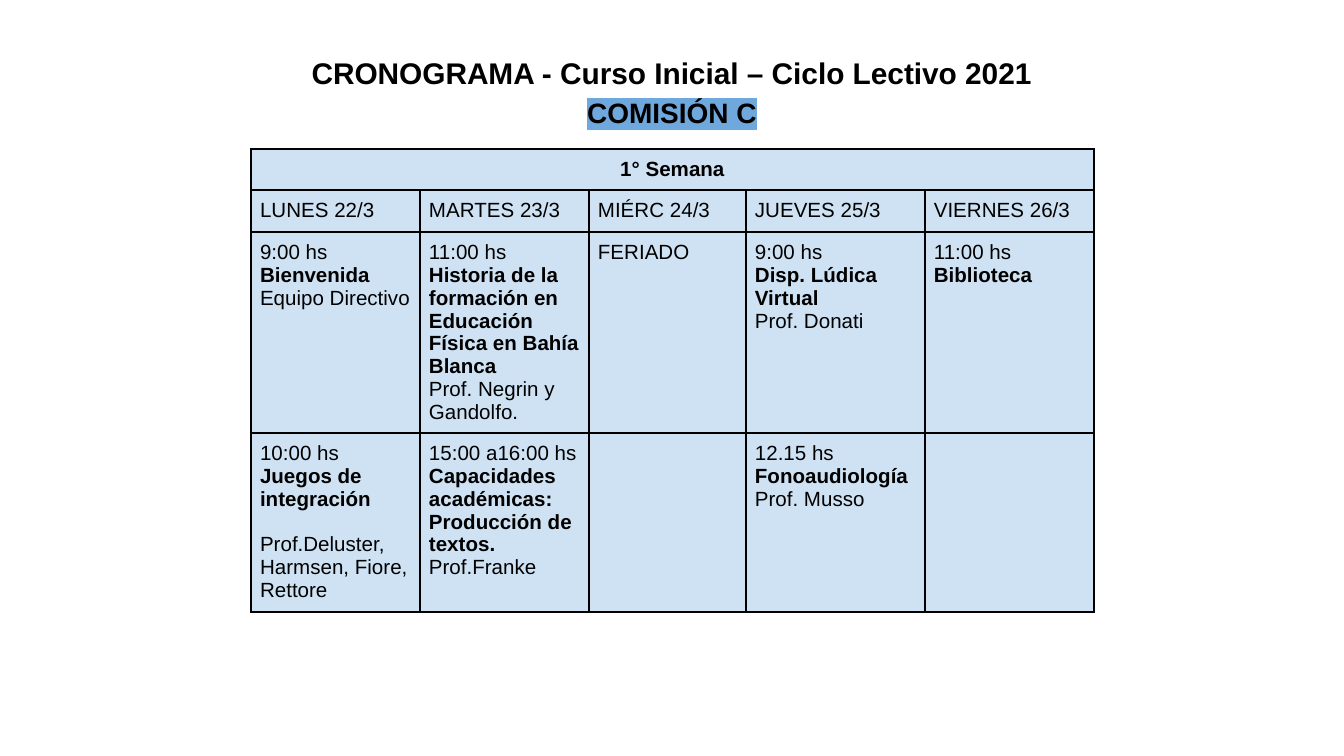
import pptx
import pptx.dml.color
import pptx.enum.text
import pptx.oxml
import pptx.oxml.ns
import pptx.util

EMU_PER_PX = 914400 / 134.4
FONT = "Arial"
BLACK = "000000"
CELL_FILL = "CFE2F3"
HIGHLIGHT = "6FA8DC"
CENTER = pptx.enum.text.PP_ALIGN.CENTER

COLUMN_WIDTHS = [169, 169, 157, 179, 169]
ROW_HEIGHTS = [41, 42, 201, 179]

WEEK = "1° Semana"
DAYS = ["LUNES 22/3", "MARTES 23/3", "MIÉRC 24/3", "JUEVES 25/3", "VIERNES 26/3"]

# Each activity: time, bold title lines, closing lines
ACTIVITIES = [
    [
        ("9:00 hs", ["Bienvenida"], ["Equipo Directivo"]),
        ("11:00 hs",
         ["Historia de la formación en Educación Física en Bahía Blanca"],
         ["Prof. Negrin y Gandolfo."]),
        ("FERIADO", [], []),
        ("9:00 hs", ["Disp. Lúdica", "Virtual"], ["Prof. Donati"]),
        ("11:00 hs", ["Biblioteca"], []),
    ],
    [
        ("10:00 hs", ["Juegos de integración"],
         ["Prof.Deluster, Harmsen, Fiore,", "Rettore"]),
        ("15:00 a16:00 hs",
         ["Capacidades académicas: Producción de textos."], ["Prof.Franke"]),
        None,
        ("12.15 hs", ["Fonoaudiología"], ["Prof. Musso"]),
        None,
    ],
]


def px(length):
    return pptx.util.Emu(round(length * EMU_PER_PX))


def color(value):
    return pptx.dml.color.RGBColor.from_string(value)


def solid_fill_xml(tag, value, attributes=""):
    namespace = pptx.oxml.ns.nsdecls("a")
    return pptx.oxml.parse_xml(
        f'<a:{tag} {namespace} {attributes}><a:solidFill>'
        f'<a:srgbClr val="{value}"/></a:solidFill></a:{tag}>')


def set_attributes(target, values):
    for name, value in values.items():
        setattr(target, name, value)


def write_lines(text_frame, lines, paragraph_format=None):
    """Write (text, size, bold) lines, one paragraph each."""
    for index, (text, size, bold) in enumerate(lines):
        paragraph = text_frame.paragraphs[0] if index == 0 else text_frame.add_paragraph()
        set_attributes(paragraph, paragraph_format or {})
        run = paragraph.add_run()
        run.text = text
        set_attributes(run.font, {"size": pptx.util.Pt(size), "bold": bold})
        run.font.color.rgb = color(BLACK)
        run.font.name = FONT


def highlight(run, value):
    mark = pptx.oxml.parse_xml(
        f'<a:highlight {pptx.oxml.ns.nsdecls("a")}><a:srgbClr val="{value}"/></a:highlight>')
    run.font._element.find(pptx.oxml.ns.qn("a:latin")).addprevious(mark)


def add_heading(slide):
    box = slide.shapes.add_textbox(px(249), px(36), px(846), px(108))
    inset = pptx.util.Inches(0.1)
    set_attributes(box.text_frame, {
        "word_wrap": True, "margin_left": inset, "margin_right": inset,
        "margin_top": inset, "margin_bottom": inset})
    write_lines(box.text_frame, [
        ("CRONOGRAMA - Curso Inicial – Ciclo Lectivo 2021", 16, True),
        ("COMISIÓN C", 15, True),
    ], {"alignment": CENTER, "line_spacing": 1.15})
    highlight(box.text_frame.paragraphs[1].runs[0], HIGHLIGHT)


def style_cell(cell):
    set_attributes(cell, {side: px(9) for side in (
        "margin_left", "margin_right", "margin_top", "margin_bottom")})
    cell.fill.solid()
    cell.fill.fore_color.rgb = color(CELL_FILL)
    properties = cell._tc.get_or_add_tcPr()
    for index, side in enumerate(("lnL", "lnR", "lnT", "lnB")):
        properties.insert(index, solid_fill_xml(side, BLACK, 'w="12700"'))


def activity_lines(activity):
    time, titles, closing = activity
    return ([(time, 11, False)] + [(title, 11, True) for title in titles]
            + [(line, 11, False) for line in closing])


def add_schedule(slide):
    frame = slide.shapes.add_table(
        len(ROW_HEIGHTS), len(COLUMN_WIDTHS), px(251), px(149),
        px(sum(COLUMN_WIDTHS)), px(sum(ROW_HEIGHTS)))
    table = frame.table
    set_attributes(table, {"first_row": False, "horz_banding": False})
    for column, width in zip(table.columns, COLUMN_WIDTHS):
        column.width = px(width)
    for row, height in zip(table.rows, ROW_HEIGHTS):
        row.height = px(height)
    for cell in table.iter_cells():
        style_cell(cell)

    # Week and day headings
    last_column = len(COLUMN_WIDTHS) - 1
    table.cell(0, 0).merge(table.cell(0, last_column))
    write_lines(table.cell(0, 0).text_frame, [(WEEK, 11, True)], {"alignment": CENTER})
    for column, day in enumerate(DAYS):
        write_lines(table.cell(1, column).text_frame, [(day, 11, False)])

    # Activities
    for row, activities in enumerate(ACTIVITIES, start=2):
        for column, activity in enumerate(activities):
            if activity:
                write_lines(table.cell(row, column).text_frame, activity_lines(activity))

    # Gap between the games and their teachers
    teachers = table.cell(3, 0).text_frame.paragraphs[2]
    teachers.space_before = pptx.util.Pt(12.3)


def main():
    presentation = pptx.Presentation()
    set_attributes(presentation, {"slide_width": px(1344), "slide_height": px(756)})
    slide = presentation.slides.add_slide(presentation.slide_layouts[6])
    add_schedule(slide)
    add_heading(slide)
    presentation.save("out.pptx")


if __name__ == "__main__":
    main()
